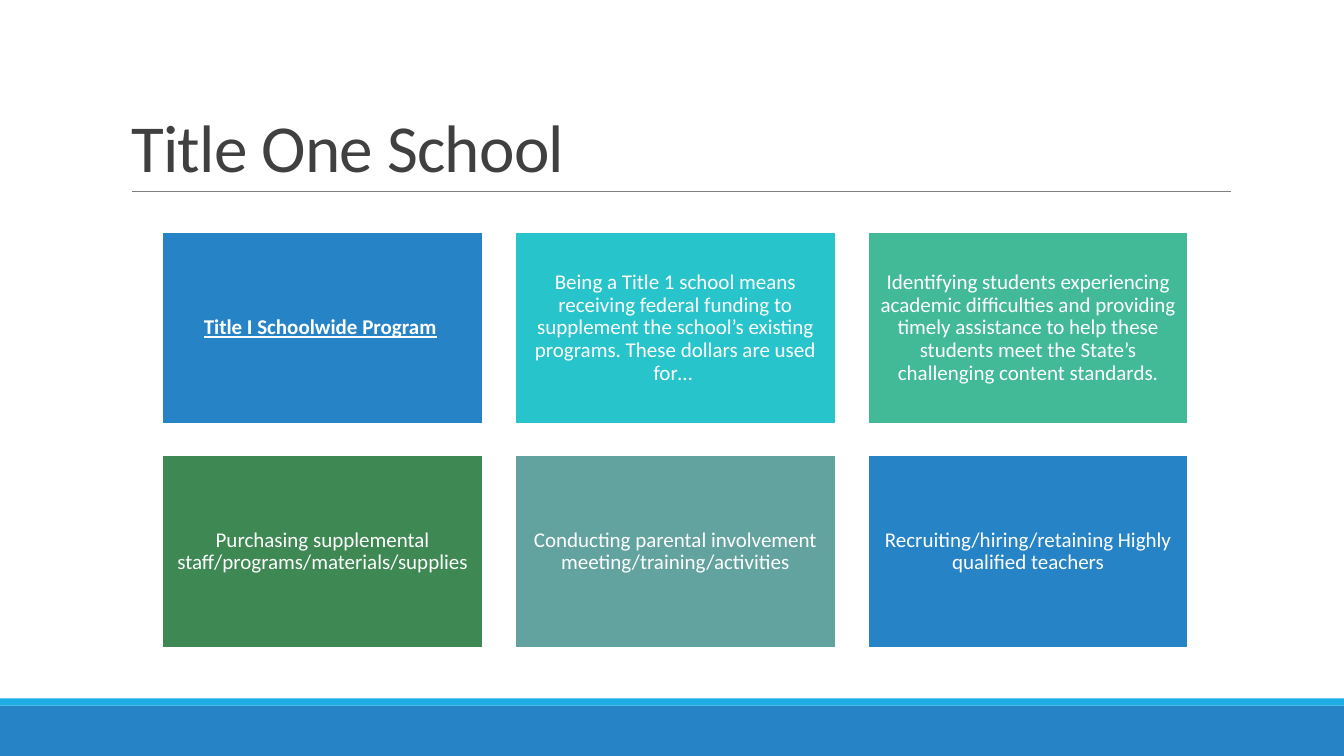
import pptx
import pptx.util
import pptx.dml.color
import pptx.enum.shapes
import pptx.enum.text
from lxml import etree

Cm, Pt = pptx.util.Cm, pptx.util.Pt
SHAPE = pptx.enum.shapes.MSO_SHAPE.RECTANGLE
LINE = pptx.enum.shapes.MSO_CONNECTOR.STRAIGHT
ALIGN = pptx.enum.text.PP_ALIGN
ANCHOR = pptx.enum.text.MSO_ANCHOR

TITLE = "Title One School "
# Each tile: fill, then runs of (text, heading style)
TILES = [
    ("2683C6", [("Title I Schoolwide Program", True), (" ", False)]),
    ("28C4CC", [("Being a Title 1 school means receiving federal funding to "
                 "supplement the school’s existing programs. These dollars "
                 "are used for… ", False)]),
    ("42BA97", [("Identifying students experiencing academic difficulties and "
                 "providing timely assistance to help these students meet the "
                 "State’s challenging content standards.", False)]),
    ("3E8853", [("Purchasing supplemental "
                 "staff/programs/materials/supplies", False)]),
    ("62A39F", [("Conducting parental involvement "
                 "meeting/training/activities", False)]),
    ("2683C6", [("Recruiting/hiring/retaining Highly qualified teachers",
                 False)]),
]
BANDS = [("2683C6", 17.78, 1.27), ("1CADE4", 17.6, 0.18)]  # fill, top, height

WIDE, HIGH = 33.87, 19.05
COLS = 3
LEFT, TOP = 4.09, 5.84
TILE_W, TILE_H = 8.08, 4.85
STEP_X, STEP_Y = 8.89, 5.64

FRAME = {"word_wrap": True, "vertical_anchor": ANCHOR.MIDDLE,
         "margin_left": Cm(0.15), "margin_right": Cm(0.15),
         "margin_top": Cm(0.15), "margin_bottom": Cm(0.15)}
PARA = {"alignment": ALIGN.CENTER, "line_spacing": 0.9}


def color(code):
    return pptx.dml.color.RGBColor.from_string(code)


def apply(item, values):
    for name, value in values.items():
        setattr(item, name, value)


def style(run, size, code, bold=False):
    apply(run.font, {"name": "Calibri", "size": Pt(size),
                     "bold": bold, "underline": bold})
    run.font.color.rgb = color(code)


def rect(slide, x, y, w, h, fill):
    box = slide.shapes.add_shape(SHAPE, Cm(x), Cm(y), Cm(w), Cm(h))
    box.shadow.inherit = False
    box.fill.solid()
    box.fill.fore_color.rgb = color(fill)
    return box


def add_title(slide):
    title = slide.shapes.title
    apply(title, {"left": Cm(3.05), "top": Cm(0.79),
                  "width": Cm(27.94), "height": Cm(4.04)})
    apply(title.text_frame, {"word_wrap": True,
                             "vertical_anchor": ANCHOR.BOTTOM,
                             "auto_size": pptx.enum.text.MSO_AUTO_SIZE.NONE})
    para = title.text_frame.paragraphs[0]
    apply(para, {"alignment": ALIGN.LEFT, "line_spacing": 0.85})
    run = para.add_run()
    run.text = TITLE
    style(run, 48, "404040")
    run.font._element.set("spc", "-50")


def add_rule(slide):
    rule = slide.shapes.add_connector(LINE, Cm(3.33), Cm(4.83),
                                      Cm(31.01), Cm(4.83))
    rule.line.color.rgb = color("808080")
    rule.line.width = Pt(0.5)
    etree.SubElement(rule._element.spPr, pptx.oxml.ns.qn("a:effectLst"))


def add_tile(slide, index, fill, runs):
    row, col = divmod(index, COLS)
    tile = rect(slide, LEFT + col * STEP_X, TOP + row * STEP_Y,
                TILE_W, TILE_H, fill)
    tile.line.color.rgb = color("FFFFFF")
    tile.line.width = Pt(1.25)
    apply(tile.text_frame, FRAME)
    para = tile.text_frame.paragraphs[0]
    apply(para, PARA)
    for text, bold in runs:
        run = para.add_run()
        run.text = text
        style(run, 15, "FFFFFF", bold)


def main():
    deck = pptx.Presentation()
    apply(deck, {"slide_width": Cm(WIDE), "slide_height": Cm(HIGH)})
    slide = deck.slides.add_slide(deck.slide_layouts[5])
    for fill, top, high in BANDS:
        rect(slide, 0, top, WIDE, high, fill).line.fill.background()
    add_rule(slide)
    add_title(slide)
    for index, (fill, runs) in enumerate(TILES):
        add_tile(slide, index, fill, runs)
    deck.save("out.pptx")


if __name__ == "__main__":
    main()
